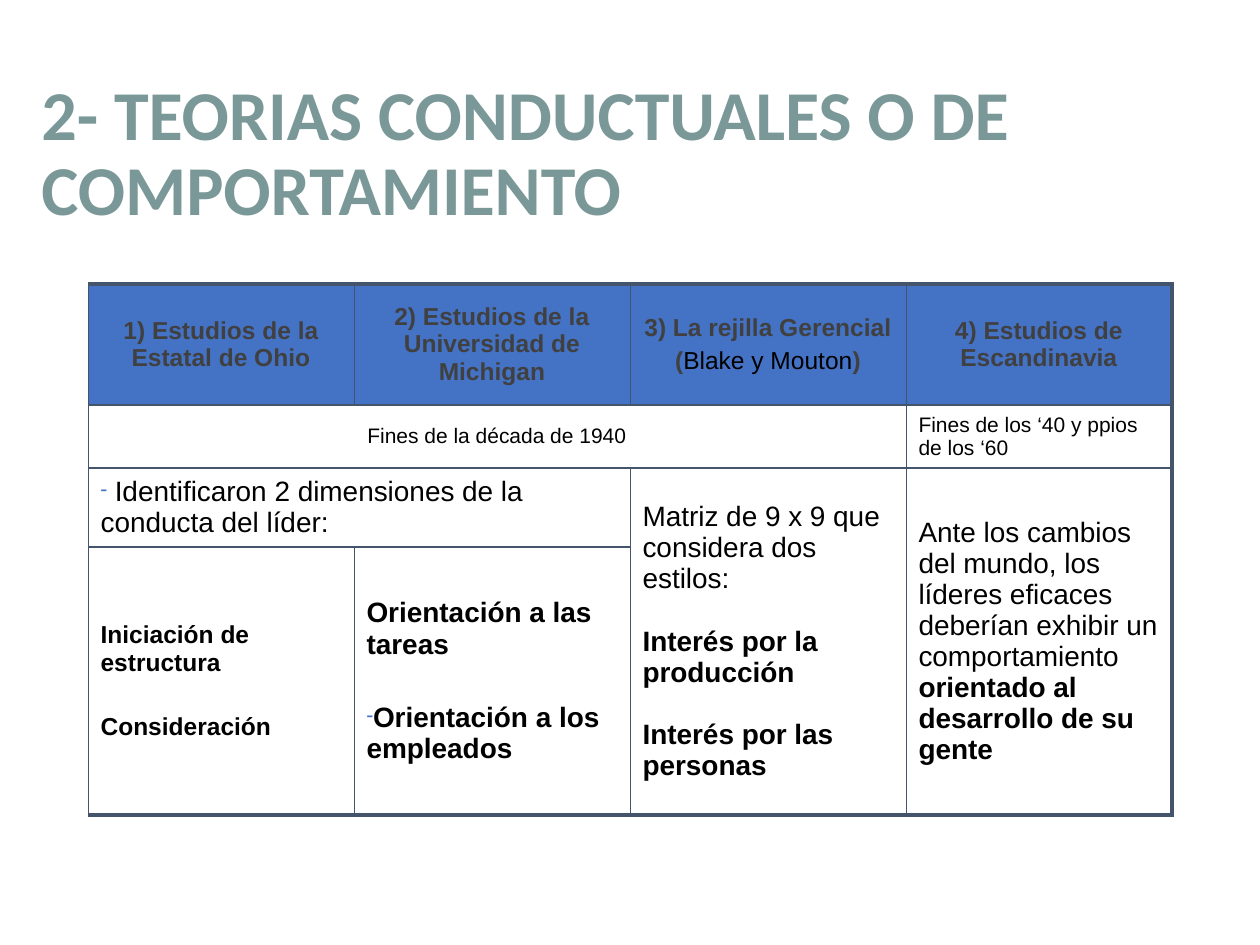
from lxml.etree import SubElement
from pptx import Presentation
from pptx.dml.color import RGBColor
from pptx.enum.text import MSO_ANCHOR, PP_ALIGN
from pptx.oxml import parse_xml
from pptx.oxml.ns import nsdecls, qn
from pptx.util import Pt

SCALE = 914400 // 126
BLUE, NAVY, GREY, BLACK = "4472C4", "44546A", "404040", "000000"
THIN, MID, THICK = 0.25, 1, 2.25
COLS = [266, 276, 276, 266]
ROWS = [121, 63, 79, 268]


def px(n):
    return n * SCALE


def color(code):
    return RGBColor.from_string(code)


def write(par, text, size=16, bold=False, ink=BLACK, font="Arial"):
    run = par.add_run()
    run.text = text
    run.font.size, run.font.bold, run.font.name = Pt(size), bold, font
    run.font.color.rgb = color(ink)


def dash(par):
    props = par._p.get_or_add_pPr()
    tint = SubElement(props, qn("a:buClr"))
    SubElement(tint, qn("a:srgbClr"), val=BLUE)
    SubElement(props, qn("a:buSzPct"), val="70000")
    SubElement(props, qn("a:buChar"), char="-")


def edge(cell, side, width):
    return parse_xml(
        f'<a:ln{side} {nsdecls("a")} w="{Pt(width)}">'
        f'<a:solidFill><a:srgbClr val="{NAVY}"/></a:solidFill></a:ln{side}>')


def frame(cell, row, col):
    """Thick lines on the top, right and bottom of the table, thin inside."""
    last_row = row + cell.span_height == len(ROWS) if cell.is_merge_origin \
        else row == len(ROWS) - 1
    widths = {
        "L": THIN,
        "R": THICK if col == len(COLS) - 1 else THIN,
        "T": MID if row else THICK,
        "B": THICK if last_row else MID,
    }
    props = cell._tc.get_or_add_tcPr()
    for spot, (side, width) in enumerate(widths.items()):
        props.insert(spot, edge(cell, side, width))


def fill(cell, pars, align=PP_ALIGN.LEFT):
    """Each paragraph is (space before, has dash, [(text, format), ...])."""
    cell.vertical_anchor = MSO_ANCHOR.MIDDLE
    box = cell.text_frame
    for i, (gap, mark, runs) in enumerate(pars):
        par = box.add_paragraph() if i else box.paragraphs[0]
        par.alignment = align
        par.space_before = Pt(gap)
        if mark:
            dash(par)
        for text, look in runs:
            write(par, text, **look)


def title(slide):
    box = slide.shapes.add_textbox(px(29), px(48), px(1191), px(215)).text_frame
    box.word_wrap = True
    box.vertical_anchor = MSO_ANCHOR.MIDDLE
    par = box.paragraphs[0]
    par.line_spacing = 0.9
    write(par, "2- TEORIAS CONDUCTUALES O DE COMPORTAMIENTO",
          size=40, bold=True, ink="7B9899", font="Calibri")


def grid(slide):
    table = slide.shapes.add_table(len(ROWS), len(COLS), px(88), px(284),
                                   px(sum(COLS)), px(sum(ROWS))).table
    table.first_row = table.horz_banding = False
    for col, width in zip(table.columns, COLS):
        col.width = px(width)
    for row, height in zip(table.rows, ROWS):
        row.height = px(height)
    for start, end in [((1, 0), (1, 2)), ((2, 0), (2, 1)),
                       ((2, 2), (3, 2)), ((2, 3), (3, 3))]:
        table.cell(*start).merge(table.cell(*end))
    for r in range(len(ROWS)):
        for c in range(len(COLS)):
            cell = table.cell(r, c)
            if r:
                cell.fill.background()
            else:
                cell.fill.solid()
                cell.fill.fore_color.rgb = color(BLUE)
            if not cell.is_spanned:
                frame(cell, r, c)
    return table


def content(table):
    head = dict(size=14, bold=True, ink=GREY)
    name, small = dict(size=14), dict(size=12)
    strong, label = dict(bold=True), dict(size=14, bold=True)

    # Header row
    heads = [
        [[("1) Estudios de la Estatal de Ohio", head)]],
        [[("2) Estudios de la Universidad de Michigan", head)]],
        [[("3) La rejilla Gerencial ", head)],
         [("(", head), ("Blake y Mouton", name), (")", head)]],
        [[("4) Estudios de Escandinavia", head)]],
    ]
    for c, pars in enumerate(heads):
        fill(table.cell(0, c), [(3, False, runs) for runs in pars],
             PP_ALIGN.CENTER)

    # Dates
    fill(table.cell(1, 0), [(2, False, [("Fines de la década de 1940", small)])],
         PP_ALIGN.CENTER)
    fill(table.cell(1, 3),
         [(2, False, [("Fines de los ‘40 y ppios de los ‘60", small)])])

    # Findings
    fill(table.cell(2, 0), [(3, True, [
        (" Identificaron 2 dimensiones de la conducta del líder:", {})])])
    fill(table.cell(2, 2), [
        (0, False, [("Matriz de 9 x 9 que considera dos estilos:", {})]),
        (18, False, [("Interés por la producción", strong)]),
        (18, False, [("Interés por las personas", strong)])])
    fill(table.cell(2, 3), [(3, False, [
        ("Ante los cambios del mundo, los líderes eficaces deberían exhibir "
         "un comportamiento ", {}),
        ("orientado al desarrollo de su gente", strong)])])
    fill(table.cell(3, 0), [
        (3, False, [("Iniciación de estructura", label)]),
        (21, False, [("Consideración", label)])])
    fill(table.cell(3, 1), [
        (3, False, [("Orientación a las tareas", strong)]),
        (24, True, [("Orientación a los empleados", strong)])])


def main():
    deck = Presentation()
    deck.slide_width, deck.slide_height = px(1260), px(945)
    slide = deck.slides.add_slide(deck.slide_layouts[6])
    content(grid(slide))
    title(slide)
    deck.save("out.pptx")


if __name__ == "__main__":
    main()
